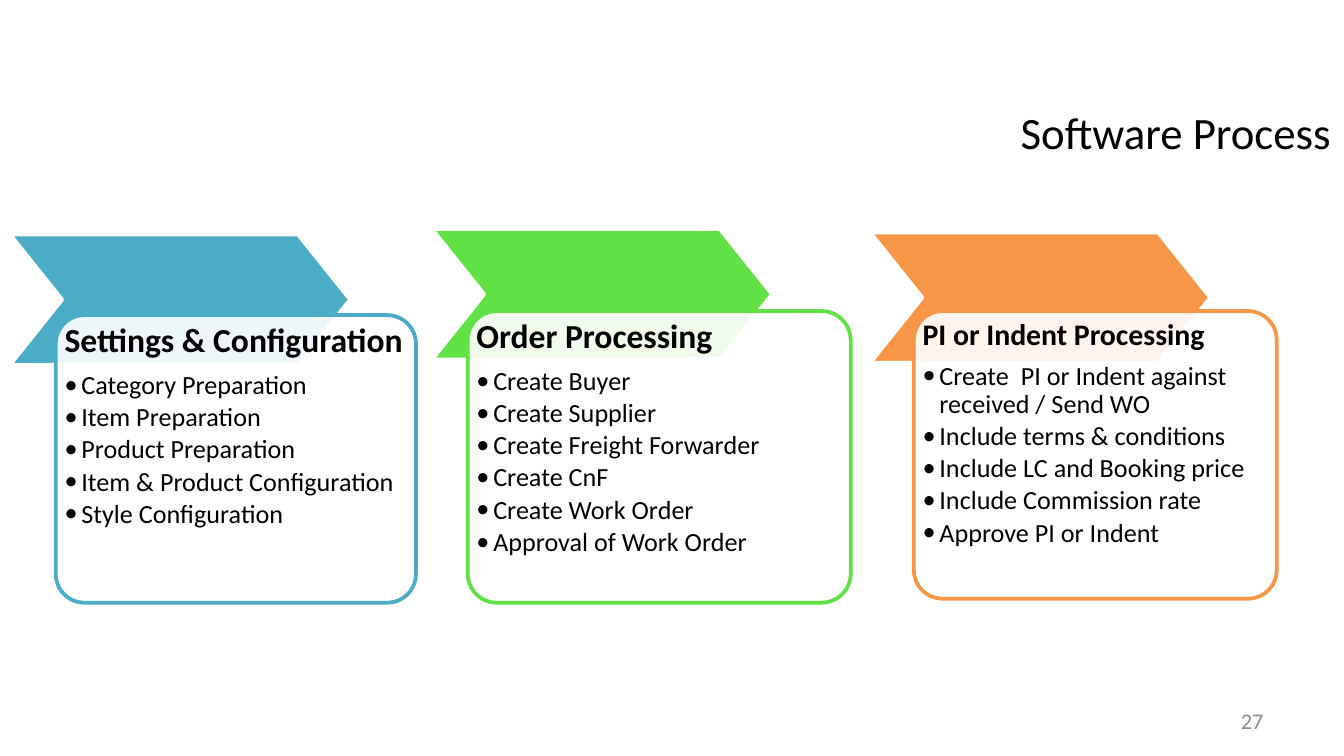
from dataclasses import dataclass

from lxml import etree
from pptx import Presentation
from pptx import util as u
from pptx.dml.color import RGBColor
from pptx.enum import shapes, text
from pptx.oxml import ns

PX = u.Inches(1) // 200


@dataclass(frozen=True)
class Theme:
    font: str = "Calibri"
    ink: str = "000000"
    muted: str = "8C8C8C"
    paper: str = "FFFFFF"
    teal: str = "4BACC6"
    green: str = "60E146"
    orange: str = "F79646"
    title: int = 24
    heading: int = 18
    small_heading: int = 16
    item: int = 14
    number: int = 12
    outline: int = 2
    card_opacity: int = 90


THEME = Theme()
CARD_PADDING = 13
BULLET_INDENT = 25

STAGES = [
    {
        "color": THEME.teal,
        "chevron": (15, 349),
        "card": (83, 469, 536, 428),
        "heading": "Settings & Configuration",
        "size": THEME.heading,
        "items": [
            "Category Preparation",
            "Item Preparation",
            "Product Preparation",
            "Item & Product Configuration",
            "Style Configuration",
        ],
    },
    {
        "color": THEME.green,
        "chevron": (643, 341),
        "card": (696, 463, 570, 434),
        "heading": "Order Processing",
        "size": THEME.heading,
        "items": [
            "Create Buyer",
            "Create Supplier",
            "Create Freight Forwarder",
            "Create CnF",
            "Create Work Order",
            "Approval of Work Order",
        ],
    },
    {
        "color": THEME.orange,
        "chevron": (1295, 346),
        "card": (1360, 463, 540, 428),
        "heading": "PI or Indent Processing",
        "size": THEME.small_heading,
        "items": [
            "Create  PI or Indent against received / Send WO",
            "Include terms & conditions",
            "Include LC and Booking price",
            "Include Commission rate",
            "Approve PI or Indent",
        ],
    },
]


def scaled(*lengths):
    return [length * PX for length in lengths]


def apply_format(target, values):
    for name, value in values.items():
        setattr(target, name, value)


def add_box(container, place, **frame_format):
    frame = container.add_textbox(*scaled(*place)).text_frame
    apply_format(frame, {"word_wrap": True, **frame_format})
    return frame


def write(paragraph, words, size, color=THEME.ink, bold=False, **paragraph_format):
    run = paragraph.add_run()
    run.text = words
    apply_format(run.font, {"name": THEME.font, "size": u.Pt(size), "bold": bold})
    run.font.color.rgb = RGBColor.from_string(color)
    apply_format(paragraph, paragraph_format)


def add_label(slide, place, words, size, color):
    frame = add_box(slide.shapes, place, vertical_anchor=text.MSO_ANCHOR.MIDDLE)
    write(frame.paragraphs[0], words, size, color, alignment=text.PP_ALIGN.RIGHT)


def add_panel(container, kind, place, adjustment, fill, line):
    shape = container.add_shape(kind, *scaled(*place))
    shape.shadow.inherit = False
    shape.adjustments[0] = adjustment
    shape.fill.solid()
    shape.fill.fore_color.rgb = RGBColor.from_string(fill)
    shape.line.color.rgb = RGBColor.from_string(line)
    shape.line.width = u.Pt(THEME.outline)
    return shape


def set_opacity(shape, percent):
    color = shape.fill._xPr.find(ns.qn("a:solidFill"))[0]
    etree.SubElement(color, ns.qn("a:alpha"), val=str(percent * 1000))


def add_bullet(paragraph):
    properties = paragraph._p.get_or_add_pPr()
    properties.set("marL", str(BULLET_INDENT * PX))
    properties.set("indent", str(-BULLET_INDENT * PX))
    etree.SubElement(properties, ns.qn("a:buFont"), typeface=THEME.font)
    etree.SubElement(properties, ns.qn("a:buChar"), char="•")


def add_stage_text(container, card, stage):
    left, top, width, height = card
    place = (
        left + CARD_PADDING,
        top + CARD_PADDING,
        width - 2 * CARD_PADDING,
        height - 2 * CARD_PADDING,
    )
    margins = dict.fromkeys(
        ("margin_left", "margin_top", "margin_right", "margin_bottom"), 0
    )
    frame = add_box(container, place, **margins)
    write(
        frame.paragraphs[0],
        stage["heading"],
        stage["size"],
        bold=True,
        line_spacing=0.9,
        space_after=u.Pt(stage["size"] * 0.35),
    )
    for item in stage["items"]:
        paragraph = frame.add_paragraph()
        add_bullet(paragraph)
        write(
            paragraph,
            item,
            THEME.item,
            level=1,
            line_spacing=0.9,
            space_after=u.Pt(THEME.item * 0.15),
        )


def add_stage(container, stage):
    kinds = shapes.MSO_SHAPE
    color, card = stage["color"], stage["card"]
    chevron = (*stage["chevron"], 506, 194)
    add_panel(container, kinds.CHEVRON, chevron, 0.4, color, THEME.paper)
    panel = add_panel(
        container, kinds.ROUNDED_RECTANGLE, card, 0.1, THEME.paper, color
    )
    set_opacity(panel, THEME.card_opacity)
    add_stage_text(container, card, stage)


def main():
    presentation = Presentation()
    presentation.slide_width, presentation.slide_height = scaled(2000, 1125)
    slide = presentation.slides.add_slide(presentation.slide_layouts[6])
    add_label(slide, (1366, 146, 634, 100), "Software Process", THEME.title, THEME.ink)
    add_label(slide, (1434, 1043, 466, 60), "27", THEME.number, THEME.muted)
    process = slide.shapes.add_group_shape()
    for stage in STAGES:
        add_stage(process.shapes, stage)
    presentation.save("out.pptx")


if __name__ == "__main__":
    main()
